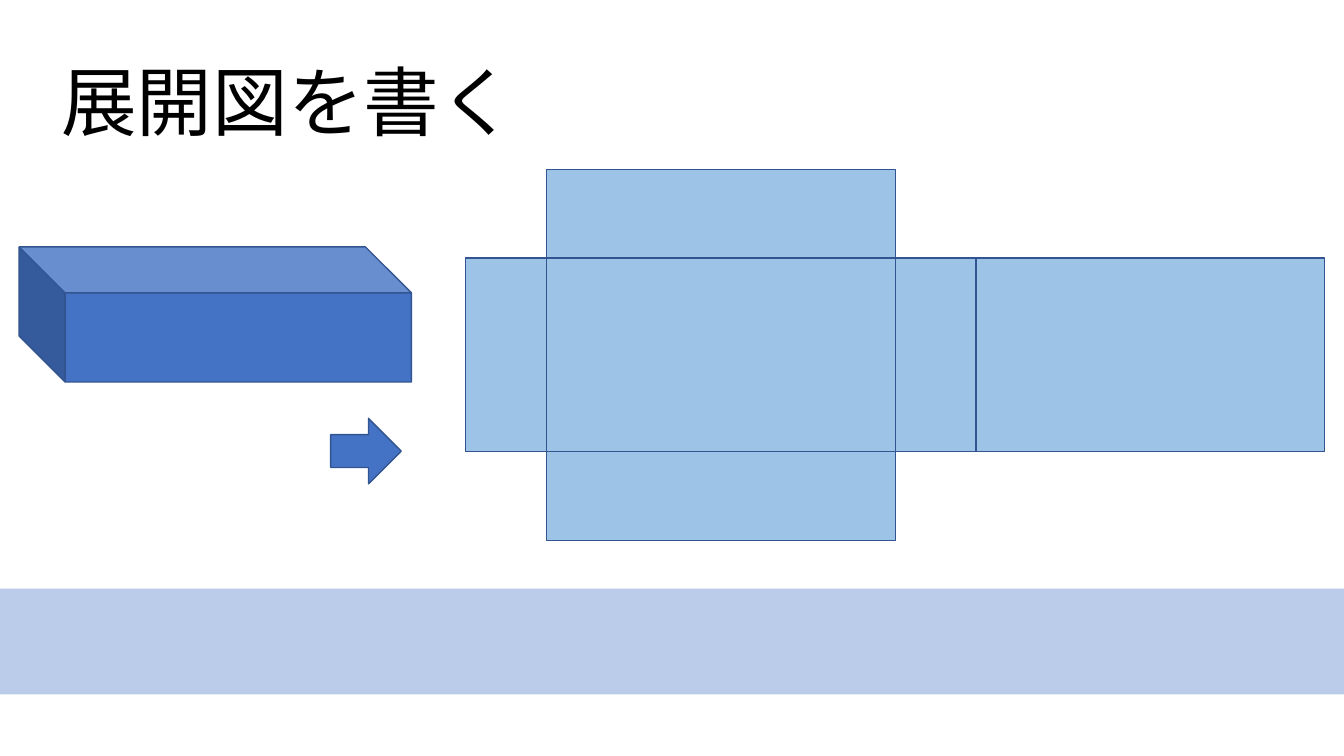
from pptx import Presentation
from pptx.dml.color import RGBColor
from pptx.enum.shapes import MSO_SHAPE
from pptx.oxml.ns import qn
from pptx.util import Inches, Pt
from lxml.etree import SubElement


def color(code):
    return RGBColor.from_string(code)


class Board:
    font = "Noto Sans CJK JP"
    solid = "4472C4"
    panel = "9DC3E6"
    edge = "325491"
    band = "8FAADC"
    ink = "000000"

    def __init__(self, slide):
        self.slide = slide

    def shape(self, kind, box, fill, line=None):
        item = self.slide.shapes.add_shape(kind, *map(Inches, box))
        item.shadow.inherit = False
        item.fill.solid()
        item.fill.fore_color.rgb = color(fill)
        if line:
            item.line.color.rgb = color(line)
            item.line.width = Pt(1)
        else:
            item.line.fill.background()
        return item

    def strip(self, box, alpha):
        item = self.shape(MSO_SHAPE.RECTANGLE, box, self.band)
        tint = item._element.spPr.find(qn("a:solidFill"))[0]
        SubElement(tint, qn("a:alpha")).set("val", str(alpha * 1000))

    def cube(self, box, depth):
        item = self.shape(MSO_SHAPE.CUBE, box, self.solid, self.edge)
        item.adjustments[0] = depth
        item._element.spPr.find(qn("a:xfrm")).set("flipH", "1")

    def arrow(self, box):
        self.shape(MSO_SHAPE.RIGHT_ARROW, box, self.solid, self.edge)

    def net(self, left, top, wide, deep, high, side):
        body = left + side
        row = top + high
        far = body + wide
        panels = [
            (body, row, wide, deep),
            (far, row, side, deep),
            (left, row, side, deep),
            (body, top, wide, high),
            (body, row + deep, wide, high),
            (far + side, row, wide, deep),
        ]
        for box in panels:
            self.shape(MSO_SHAPE.RECTANGLE, box, self.panel, self.edge)

    def title(self, text, box, size):
        frame = self.slide.shapes.add_textbox(*map(Inches, box)).text_frame
        frame.word_wrap = False
        run = frame.paragraphs[0].add_run()
        run.text = text
        run.font.size = Pt(size)
        run.font.name = self.font
        run.font.color.rgb = color(self.ink)
        SubElement(run.font._element, qn("a:ea")).set("typeface", self.font)


def main():
    deck = Presentation()
    deck.slide_width = Inches(13.33)
    deck.slide_height = Inches(7.5)
    board = Board(deck.slides.add_slide(deck.slide_layouts[6]))
    board.strip((0, 5.84, 13.33, 1.05), alpha=60)
    board.cube((0.19, 2.45, 3.89, 1.34), depth=0.34)
    board.arrow((3.28, 4.15, 0.7, 0.65))
    board.title("展開図を書く", (0.51, 0.5, 4.75, 1.01), size=54)
    board.net(4.62, 1.68, wide=3.46, deep=1.92, high=0.88, side=0.8)
    deck.save("out.pptx")


if __name__ == "__main__":
    main()
